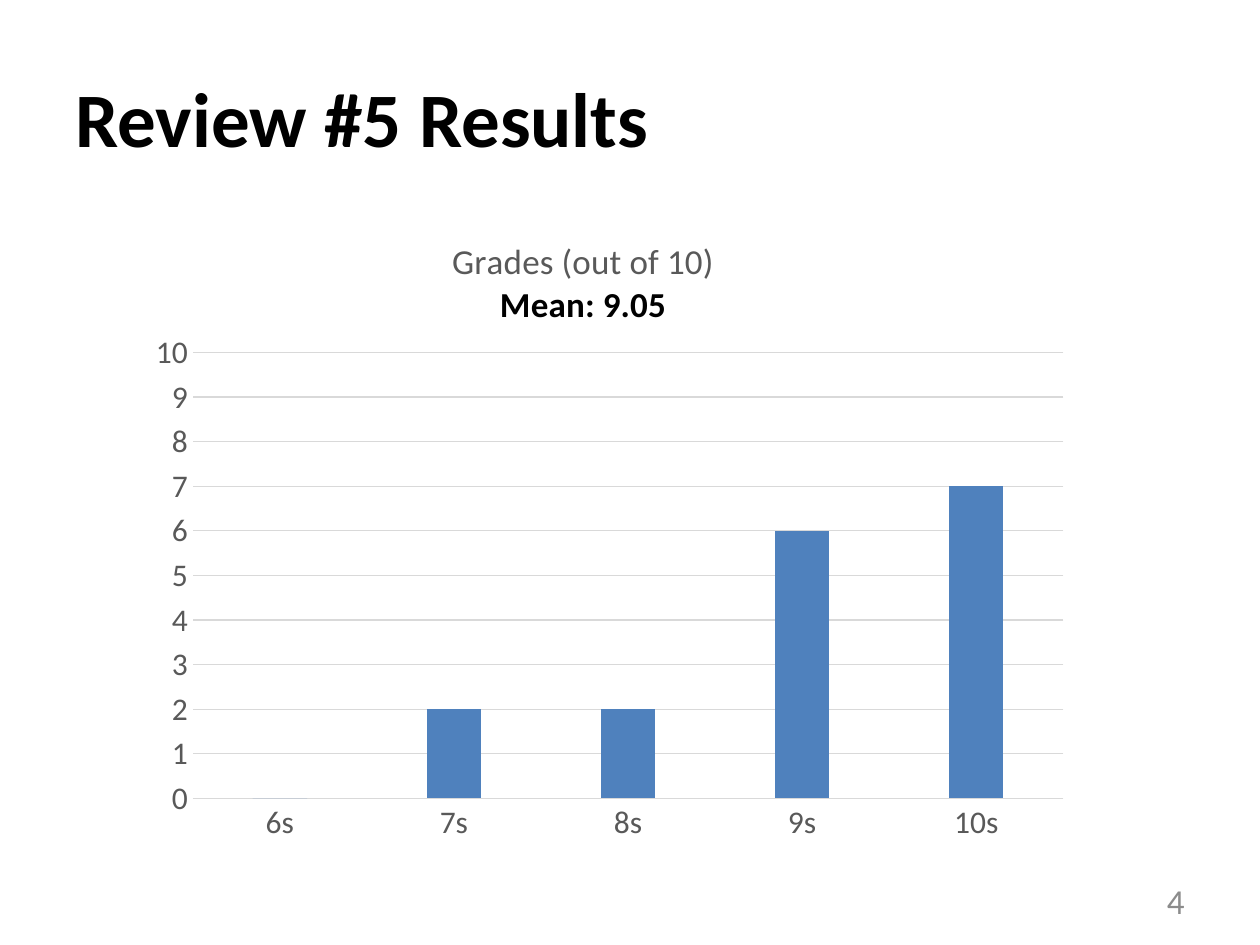
from lxml import etree
from pptx import Presentation
from pptx import util as u
from pptx.chart.data import CategoryChartData
from pptx.dml.color import RGBColor
from pptx.enum import chart as charts, text
from pptx.oxml import parse_xml
from pptx.oxml.ns import nsdecls, qn


def color(hex_string):
    return RGBColor.from_string(hex_string)


class ResultsSlide:
    """Holds the style and the current slide, and adds its elements."""

    FONT = "Calibri"
    INK, LABEL, MUTED = "000000", "595959", "8C8C8C"
    GRID, BAR = "D9D9D9", "4F81BD"

    def __init__(self, presentation):
        self.slide = presentation.slides.add_slide(presentation.slide_layouts[6])

    def style(self, font, size, hex_string, bold=False):
        font.name, font.size, font.bold = self.FONT, u.Pt(size), bold
        font.color.rgb = color(hex_string)

    def add_text(self, box, words, size, hex_string, bold=False, align=text.PP_ALIGN.LEFT):
        frame = self.slide.shapes.add_textbox(*map(u.Inches, box)).text_frame
        frame.word_wrap = True
        frame.vertical_anchor = text.MSO_ANCHOR.MIDDLE
        frame.text = words
        paragraph = frame.paragraphs[0]
        paragraph.alignment = align
        self.style(paragraph.runs[0].font, size, hex_string, bold)

    def place(self, element, index, **fractions):
        for layout in element.findall(qn("c:layout")):
            element.remove(layout)
        layout = parse_xml(f"<c:layout {nsdecls('c')}><c:manualLayout/></c:layout>")
        settings = {"xMode": "edge", "yMode": "edge", **fractions}
        if "w" in fractions:
            settings = {"layoutTarget": "inner", **settings}
        for name, value in settings.items():
            etree.SubElement(layout[0], qn(f"c:{name}")).set("val", str(value))
        element.insert(index, layout)

    def add_chart_title(self, chart, lines):
        frame = chart.chart_title.text_frame
        frame.text = "\n".join(words for words, _, _ in lines)
        for paragraph, (_, hex_string, bold) in zip(frame.paragraphs, lines):
            self.style(paragraph.runs[0].font, 20, hex_string, bold)
        chart.chart_title.include_in_layout = False
        self.place(chart.chart_title._element, 1, x=0.33, y=0.11)

    def style_axis(self, axis):
        axis.major_tick_mark = axis.minor_tick_mark = charts.XL_TICK_MARK.NONE
        self.style(axis.tick_labels.font, 18, self.LABEL)

    def style_line(self, line):
        line.color.rgb = color(self.GRID)
        line.width = u.Pt(0.75)

    def add_column_chart(self, box, categories, values, title_lines):
        data = CategoryChartData()
        data.categories = categories
        data.add_series("Series 1", values)
        chart = self.slide.shapes.add_chart(
            charts.XL_CHART_TYPE.COLUMN_CLUSTERED, *map(u.Inches, box), data
        ).chart
        chart.has_legend = False
        self.style(chart.font, 10, self.INK)
        self.add_chart_title(chart, title_lines)

        plot = chart.plots[0]
        plot.gap_width, plot.overlap, plot.vary_by_categories = 219, -27, False
        fill = plot.series[0].format.fill
        fill.solid()
        fill.fore_color.rgb = color(self.BAR)

        self.style_axis(chart.category_axis)
        self.style_line(chart.category_axis.format.line)
        value_axis = chart.value_axis
        self.style_axis(value_axis)
        value_axis.minimum_scale, value_axis.maximum_scale, value_axis.major_unit = 0, 10, 1
        value_axis.format.line.fill.background()
        self.style_line(value_axis.major_gridlines.format.line)
        plot_area = chart._chartSpace.find(".//" + qn("c:plotArea"))
        self.place(plot_area, 0, x=0.06, y=0.28, w=0.92, h=0.64)


def main():
    presentation = Presentation()
    presentation.slide_width, presentation.slide_height = u.Inches(10), u.Inches(7.5)
    page = ResultsSlide(presentation)
    page.add_text((0.5, 0.3, 9, 1.25), "Review #5 Results", 44, page.INK, bold=True)
    page.add_text((7.17, 6.95, 2.33, 0.4), "4", 20, page.MUTED, align=text.PP_ALIGN.RIGHT)
    page.add_column_chart(
        (1.08, 1.25, 7.51, 5.53),
        ["6s", "7s", "8s", "9s", "10s"],
        [0, 2, 2, 6, 7],
        [("Grades (out of 10)", page.LABEL, False), ("Mean: 9.05", page.INK, True)],
    )
    presentation.save("out.pptx")


if __name__ == "__main__":
    main()
